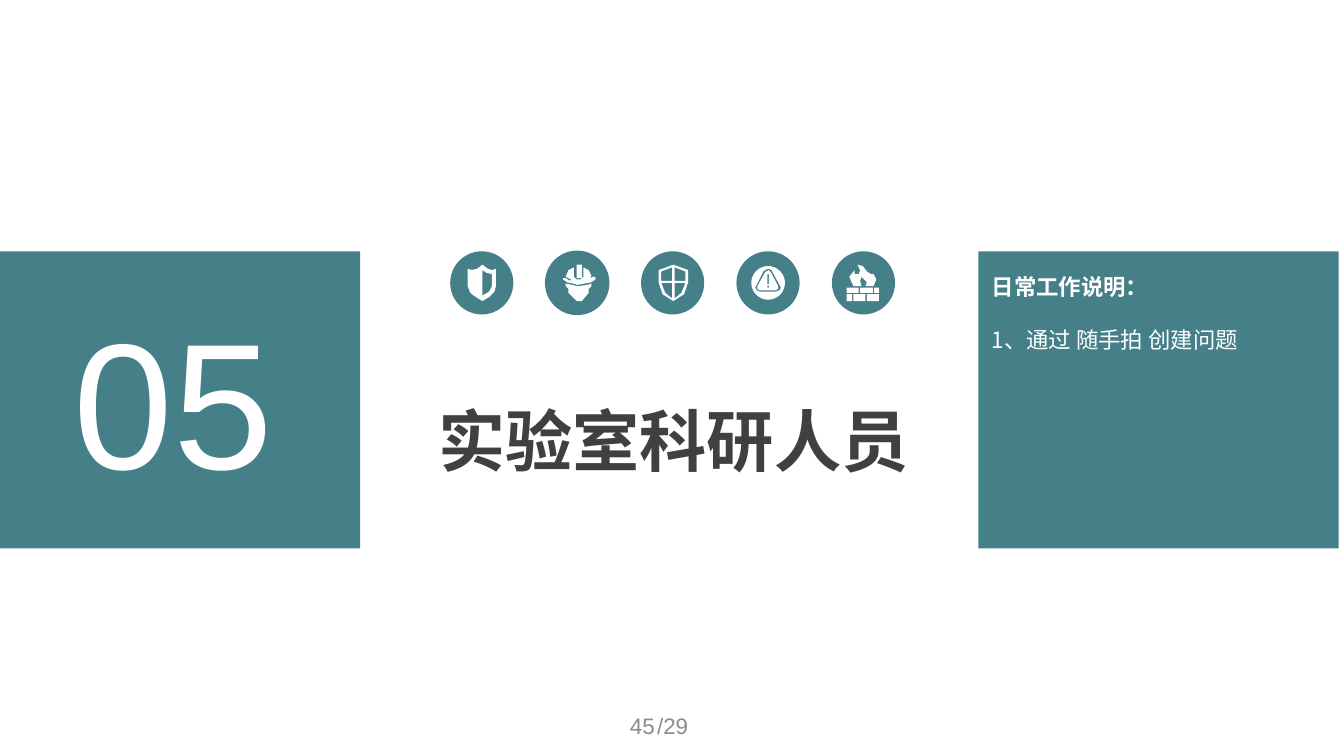
from math import cos, pi, sin

from pptx import Presentation
from pptx.dml.color import RGBColor
from pptx.enum.shapes import MSO_SHAPE
from pptx.enum.text import MSO_ANCHOR, MSO_AUTO_SIZE, PP_ALIGN
from pptx.oxml.ns import qn
from pptx.util import Inches, Pt

RECT, OVAL = MSO_SHAPE.RECTANGLE, MSO_SHAPE.OVAL
TOP, MIDDLE = MSO_ANCHOR.TOP, MSO_ANCHOR.MIDDLE
LEFT, CENTER, RIGHT = PP_ALIGN.LEFT, PP_ALIGN.CENTER, PP_ALIGN.RIGHT
NO_FIT = MSO_AUTO_SIZE.NONE

TEAL, WHITE, DARK, GRAY = "458088", "FFFFFF", "404040", "8C8C8C"
LATIN, CJK = "Arial", "Noto Sans CJK SC"


def paint(sp, color):
    sp.shadow.inherit = False
    sp.fill.solid()
    sp.fill.fore_color.rgb = RGBColor.from_string(color)
    sp.line.fill.background()


def style(p, size, color, font=LATIN, bold=False, align=LEFT):
    """Format every run of a paragraph, with a matching East Asian font."""
    p.alignment = align
    for r in p.runs:
        r.font.size, r.font.bold, r.font.name = Pt(size), bold, font
        r.font.color.rgb = RGBColor.from_string(color)
        ea = r.font._element.makeelement(qn("a:ea"), {"typeface": CJK})
        r.font._element.append(ea)


prs = Presentation()
prs.slide_width = Inches(10)
prs.slide_height = Inches(10) * 9 // 16
s = prs.slides.add_slide(prs.slide_layouts[5])

# Side panels
for x in (0, 7.28):
    paint(s.shapes.add_shape(RECT, Inches(x), Inches(1.87), Inches(2.68), Inches(2.21)), TEAL)

# Section title
title = s.shapes.title
title.left, title.top, title.width, title.height = (Inches(v) for v in (2.85, 2.92, 4.32, 0.71))
tf = title.text_frame
tf.text = "实验室科研人员"
tf.word_wrap, tf.auto_size, tf.vertical_anchor = True, NO_FIT, TOP
style(tf.paragraphs[0], 36, DARK, bold=True, align=CENTER)

# Section number and page number
for text, box, size, color, align, anchor, wrap in (
    ("05", (0.45, 2.11, 1.68, 1.72), 96, WHITE, LEFT, TOP, False),
    ("/29", (3.42, 5.25, 3.17, 0.3), 12, GRAY, CENTER, MIDDLE, True),
    ("45", (2.64, 5.25, 2.33, 0.3), 12, GRAY, RIGHT, MIDDLE, True),
):
    tf = s.shapes.add_textbox(*(Inches(v) for v in box)).text_frame
    tf.text = text
    tf.word_wrap, tf.vertical_anchor = wrap, anchor
    style(tf.paragraphs[0], size, color, align=align)

# Daily work notes
tf = s.shapes.add_textbox(Inches(7.28), Inches(1.98), Inches(2.68), Inches(0.71)).text_frame
tf.word_wrap = True
tf.text = "日常工作说明：\n1、通过 随手拍 创建问题"
for p, bold in zip(tf.paragraphs, (True, False)):
    style(p, 12, WHITE, CJK, bold)
tf.paragraphs[1].space_before = Pt(14)

# Icon outlines, in hundredths of an inch from the corner of their disc;
# an outline inside another one is a hole
shield = [
    [(13, 13), (16, 14), (20, 13), (24, 10), (28, 13), (31, 14), (34, 13), (34, 26),
     (33, 30), (29, 34), (24, 37), (19, 34), (15, 31), (13, 26)],
    [(24, 14), (27, 16), (31, 17), (31, 26), (29, 30), (24, 33)],
]
helmet = [
    [(15, 24), (24, 26), (31, 25), (34, 24), (34, 26), (32, 28), (32, 31), (27, 37),
     (23, 37), (17, 31), (17, 28), (15, 26)],
    [(21, 12), (21, 19), (23, 21), (26, 21), (28, 19), (28, 12), (32, 14), (34, 18),
     (33, 20), (35, 19), (37, 19), (37, 21), (34, 23), (24, 25), (16, 23), (13, 21),
     (13, 20), (15, 20), (18, 22), (19, 21), (15, 19), (17, 14)],
    [(23, 10), (27, 10), (27, 20), (23, 20)],
]
quartered_shield = [
    [(24, 10), (35, 14), (35, 23), (32, 32), (24, 37), (16, 32), (13, 23), (13, 14)],
    [(25, 12), (25, 22), (33, 22), (33, 15)],
    [(23, 12), (23, 22), (15, 22), (15, 15)],
    [(25, 23.5), (25, 35), (30, 31), (33, 23.5)],
    [(23, 23.5), (23, 35), (18, 31), (15, 23.5)],
]
alert = [
    [(23.5 + 12.5 * cos(i * pi / 24), 23.5 + 12.5 * sin(i * pi / 24)) for i in range(48)],
    [(22, 13.5), (24, 13), (26, 14), (32, 25), (33, 27), (32, 29), (29, 30), (17, 30),
     (15, 29), (14, 27), (15, 25), (20, 15)],
    [(22, 15), (24, 14), (25.5, 15.5), (31, 26), (31, 28), (29, 29), (17, 29),
     (15.5, 28), (15.5, 26), (21, 16)],
    [(23, 17), (24, 17), (24, 24.5), (23, 24.5)],
    [(23, 25.5), (24, 25.5), (24, 27), (23, 27)],
]
bricks = [(11, 20, 27, 31), (21, 30.5, 27, 31), (31.5, 35, 27, 31),
          (11, 15, 32, 37), (16, 25, 32, 37), (26, 35, 32, 37)]
firewall = [
    [(19, 10), (23, 11), (26, 15), (29, 17), (31, 17), (33, 21), (31, 26), (25, 26),
     (26, 23), (25, 22), (22, 19), (21, 22), (22, 26), (16, 26), (13, 19), (17, 14),
     (17, 17), (20, 17), (21, 14)],
] + [[(x1, y1), (x2, y1), (x2, y2), (x1, y2)] for x1, x2, y1, y2 in bricks]

for i, icon in enumerate((shield, helmet, quartered_shield, alert, firewall)):
    left, top = Inches(3.35 + 0.71 * i), Inches(1.87)
    shapes = s.shapes.add_group_shape().shapes
    disc = shapes.add_shape(OVAL, left, top, Inches(0.47), Inches(0.47))
    paint(disc, TEAL)
    if icon is helmet:
        disc.line.color.rgb = RGBColor.from_string(TEAL)
        disc.line.width = Pt(0.75)
    outlines = [[(x * 10, y * 10) for x, y in outline] for outline in icon]
    builder = shapes.build_freeform(*outlines[0][0], scale=Inches(1) / 1000)
    for outline in outlines:
        if outline is not outlines[0]:
            builder.move_to(*outline[0])
        builder.add_line_segments(outline[1:], close=True)
    paint(builder.convert_to_shape(left, top), WHITE)

prs.save("out.pptx")
